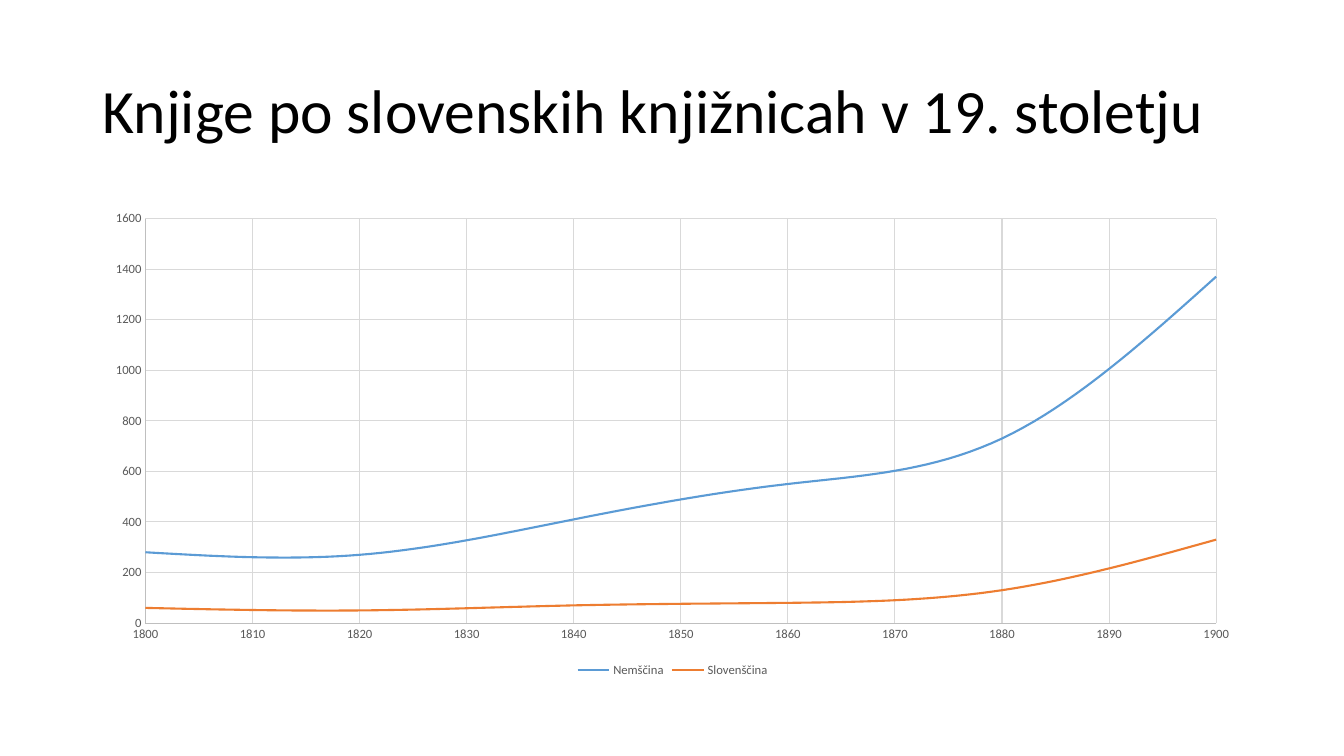
from pptx import Presentation
from pptx import util as u
from pptx.chart.data import XyChartData
from pptx.dml.color import RGBColor
from pptx.enum import chart as ch, text

COLORS = {"title": "000000", "labels": "595959", "axis": "BFBFBF", "grid": "D9D9D9",
          "Nemščina": "5B9BD5", "Slovenščina": "ED7D31"}
YEARS = range(1800, 1901, 20)
BOOKS = {"Nemščina": [280, 270, 410, 550, 730, 1370],
         "Slovenščina": [60, 50, 70, 80, 130, 330]}


class LibrarySlide:
    font_name = "Calibri"
    left, width = u.Inches(0.92), u.Inches(11.5)

    def __init__(self, deck):
        self.slide = deck.slides.add_slide(deck.slide_layouts[5])

    def style_font(self, font, size, color):
        font.name = self.font_name
        font.size = u.Pt(size)
        font.color.rgb = RGBColor.from_string(COLORS[color])

    def style_line(self, line, width, color):
        line.width = u.Pt(width)
        line.color.rgb = RGBColor.from_string(COLORS[color])

    def title(self, words, top, height):
        heading = self.slide.shapes.title
        heading.left, heading.width = self.left, self.width
        heading.top, heading.height = u.Inches(top), u.Inches(height)
        frame = heading.text_frame
        frame.word_wrap = True
        frame.auto_size = text.MSO_AUTO_SIZE.NONE
        frame.vertical_anchor = text.MSO_ANCHOR.MIDDLE
        paragraph = frame.paragraphs[0]
        paragraph.alignment = text.PP_ALIGN.LEFT
        paragraph.line_spacing = 0.9
        run = paragraph.add_run()
        run.text = words
        self.style_font(run.font, 44, "title")

    def axis(self, axis, low, high, step):
        axis.minimum_scale, axis.maximum_scale, axis.major_unit = low, high, step
        axis.major_tick_mark = axis.minor_tick_mark = ch.XL_TICK_MARK.NONE
        axis.has_major_gridlines = True
        axis.tick_labels.number_format = "General"
        axis.tick_labels.number_format_is_linked = False
        self.style_font(axis.tick_labels.font, 9, "labels")
        self.style_line(axis.format.line, 0.75, "axis")
        self.style_line(axis.major_gridlines.format.line, 0.75, "grid")

    def curves(self, years, books, top, height):
        data = XyChartData()
        for language, counts in books.items():
            series = data.add_series(language)
            for year, count in zip(years, counts):
                series.add_data_point(year, count)
        chart = self.slide.shapes.add_chart(
            ch.XL_CHART_TYPE.XY_SCATTER_SMOOTH_NO_MARKERS, self.left, u.Inches(top),
            self.width, u.Inches(height), data).chart
        chart.has_title = False
        self.style_font(chart.font, 10, "title")

        # Axes
        self.axis(chart.category_axis, 1800, 1900, 10)
        self.axis(chart.value_axis, 0, 1600, 200)

        # Legend
        chart.has_legend = True
        chart.legend.position = ch.XL_LEGEND_POSITION.BOTTOM
        chart.legend.include_in_layout = False
        self.style_font(chart.legend.font, 9, "labels")

        # One curve per language
        chart.plots[0].vary_by_categories = False
        for series in chart.plots[0].series:
            series.marker.style = ch.XL_MARKER_STYLE.NONE
            self.style_line(series.format.line, 1.5, series.name)
            # Scatter series have no smooth property, so the element is set directly
            for smooth in series._element.xpath("c:smooth"):
                smooth.set("val", "1")


def main():
    deck = Presentation()
    deck.slide_width, deck.slide_height = u.Inches(13.33), u.Inches(7.5)
    page = LibrarySlide(deck)
    page.title("Knjige po slovenskih knjižnicah v 19. stoletju", 0.4, 1.45)
    page.curves(YEARS, BOOKS, 2, 4.76)
    deck.save("out.pptx")


if __name__ == "__main__":
    main()
